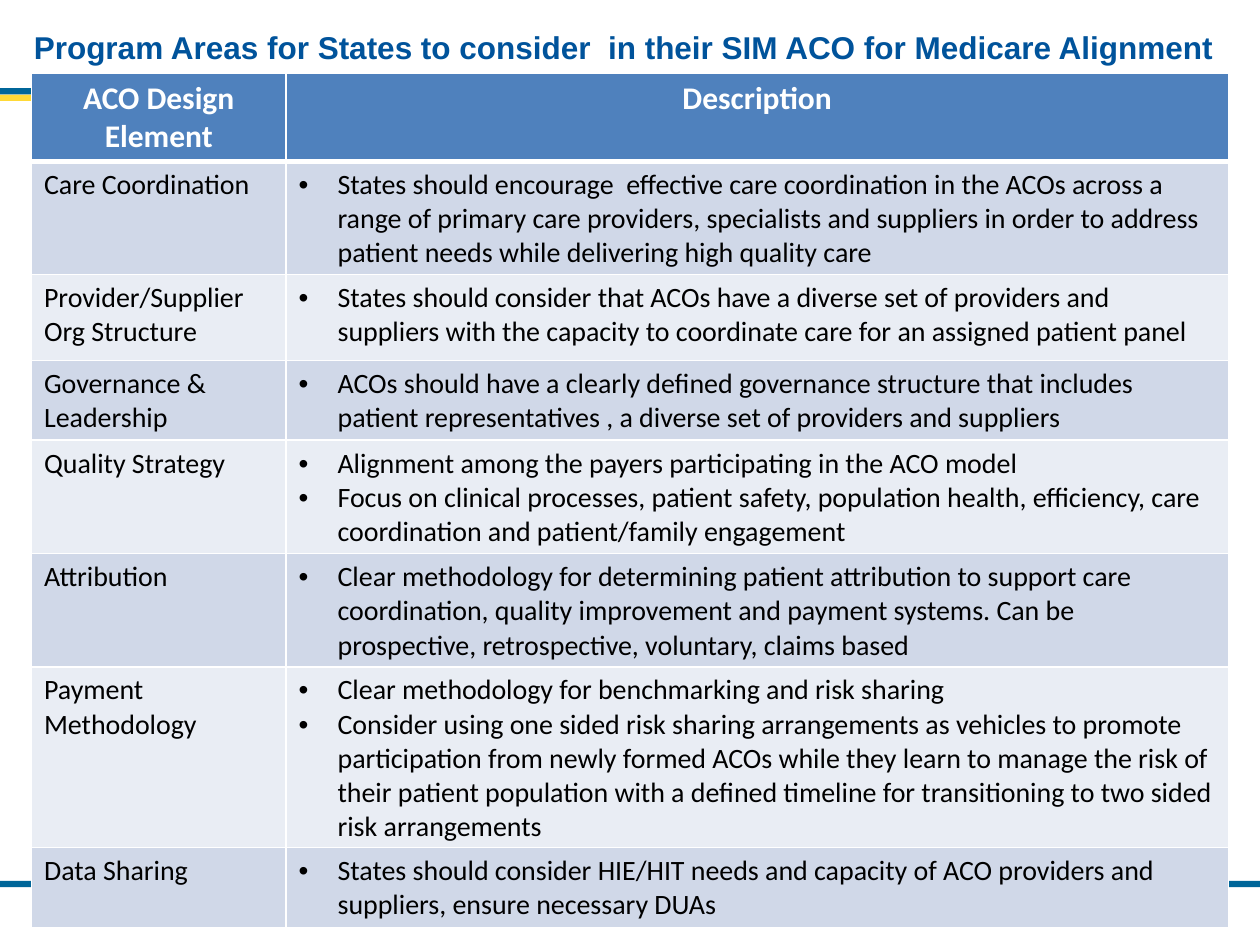
import pptx
import pptx.dml.color
import pptx.enum.shapes
import pptx.enum.text
import pptx.oxml
import pptx.oxml.ns
import pptx.util
from dataclasses import dataclass
from typing import Any

WIDTH, HEIGHT = 10, 7.5  # slide size in inches


@dataclass(frozen=True)
class Theme:
    title: str = "00539B"
    blue: str = "006699"
    yellow: str = "FFD937"
    header: str = "4F81BD"
    odd_row: str = "D0D8E8"
    even_row: str = "E9EDF4"
    white: str = "FFFFFF"
    black: str = "000000"
    title_font: str = "Arial"
    table_font: str = "Calibri"
    large: int = 18
    body: int = 16
    indent: float = 0.31


@dataclass(frozen=True)
class Band:
    """A rule from the left edge; lengths are shares of the slide."""
    top: float
    width: float
    color: str


@dataclass(frozen=True)
class Element:
    name: str
    points: tuple[str, ...]
    height: float  # inches


THEME = Theme()
BAND_HEIGHT = 0.05 / HEIGHT
BANDS = (
    Band(0.1, 0.66, THEME.yellow),
    Band(0.1 - BAND_HEIGHT, 0.527, THEME.blue),
    Band(0.932, 1, THEME.blue),
)
COLUMNS = (2.02, 7.48)
HEADINGS = ("ACO Design Element", "Description")
HEADER_HEIGHT = 0.69
ELEMENTS = (
    Element("Care Coordination", (
        "States should encourage  effective care coordination in the ACOs across a range of primary "
        "care providers, specialists and suppliers in order to address patient needs while delivering "
        "high quality care",), 0.89),
    Element("Provider/Supplier Org Structure", (
        "States should consider that ACOs have a diverse set of providers and suppliers with the "
        "capacity to coordinate care for an assigned patient panel",), 0.68),
    Element("Governance & Leadership", (
        "ACOs should have a clearly defined governance structure that includes patient "
        "representatives , a diverse set of providers and suppliers",), 0.63),
    Element("Quality Strategy", (
        "Alignment among the payers participating in the ACO model",
        "Focus on clinical processes, patient safety, population health, efficiency, care "
        "coordination and patient/family engagement"), 0.89),
    Element("Attribution", (
        "Clear methodology for determining patient attribution to support care coordination, quality "
        "improvement and payment systems. Can be prospective, retrospective, voluntary, claims "
        "based",), 0.89),
    Element("Payment Methodology", (
        "Clear methodology for benchmarking and risk sharing",
        "Consider using one sided risk sharing arrangements as vehicles to promote participation "
        "from newly formed ACOs while they learn to manage the risk of their patient population with "
        "a defined timeline for transitioning to two sided risk arrangements"), 1.42),
    Element("Data Sharing", (
        "States should consider HIE/HIT needs and capacity of ACO providers and suppliers, ensure "
        "necessary DUAs",), 0.63),
)


def across(share: float) -> int:
    return pptx.util.Inches(share * WIDTH)


def down(share: float) -> int:
    return pptx.util.Inches(share * HEIGHT)


def rgb(color: str) -> pptx.dml.color.RGBColor:
    return pptx.dml.color.RGBColor.from_string(color)


def add_span(para: Any, text: str, size: int, color: str, font: str, bold: bool) -> None:
    span = para.add_run()
    span.text = text
    span.font.size = pptx.util.Pt(size)
    span.font.name = font
    span.font.bold = bold
    span.font.color.rgb = rgb(color)


def add_bullet(para: Any) -> None:
    indent = pptx.util.Inches(THEME.indent)
    properties = para._p.get_or_add_pPr()
    properties.set("marL", str(indent))
    properties.set("indent", str(-indent))
    namespace = pptx.oxml.ns.nsdecls("a")
    properties.append(pptx.oxml.parse_xml(f'<a:buFont {namespace} typeface="Arial"/>'))
    properties.append(pptx.oxml.parse_xml(f'<a:buChar {namespace} char="•"/>'))


def add_borders(cell: Any, bottom: int) -> None:
    """White lines on all sides; they come before the fill in the cell."""
    properties = cell._tc.get_or_add_tcPr()
    for index, (side, points) in enumerate((("L", 1), ("R", 1), ("T", 1), ("B", bottom))):
        line = pptx.oxml.parse_xml(
            f'<a:ln{side} {pptx.oxml.ns.nsdecls("a")} w="{pptx.util.Pt(points)}"><a:solidFill>'
            f'<a:srgbClr val="{THEME.white}"/></a:solidFill></a:ln{side}>')
        properties.insert(index, line)


def fill_cell(cell: Any, texts: tuple[str, ...], fill: str,
              header: bool = False, bullets: bool = False) -> None:
    cell.fill.solid()
    cell.fill.fore_color.rgb = rgb(fill)
    add_borders(cell, 3 if header else 1)
    for index, text in enumerate(texts):
        para = cell.text_frame.add_paragraph() if index else cell.text_frame.paragraphs[0]
        if bullets:
            add_bullet(para)
        if header:
            para.alignment = pptx.enum.text.PP_ALIGN.CENTER
        add_span(para, text, THEME.large if header else THEME.body,
                 THEME.white if header else THEME.black, THEME.table_font, header)


def add_band(slide: Any, band: Band) -> None:
    shape = slide.shapes.add_shape(pptx.enum.shapes.MSO_SHAPE.RECTANGLE, 0, down(band.top),
                                   across(band.width), down(BAND_HEIGHT))
    shape.shadow.inherit = False
    shape.fill.solid()
    shape.fill.fore_color.rgb = rgb(band.color)
    shape.line.fill.background()


def add_title(slide: Any, text: str) -> None:
    box = slide.shapes.add_textbox(across(0.017), down(-1 / 30), across(0.975), down(1 / 6))
    box.text_frame.word_wrap = True
    box.text_frame.vertical_anchor = pptx.enum.text.MSO_ANCHOR.MIDDLE
    add_span(box.text_frame.paragraphs[0], text, THEME.large, THEME.title, THEME.title_font, True)


def add_design_table(slide: Any) -> None:
    heights = (HEADER_HEIGHT, *(element.height for element in ELEMENTS))
    table = slide.shapes.add_table(
        len(heights), len(COLUMNS), across(0.025), pptx.util.Inches(0.58),
        across(0.95), pptx.util.Inches(sum(heights))).table
    for column, width in zip(table.columns, COLUMNS):
        column.width = pptx.util.Inches(width)
    for row, height in zip(table.rows, heights):
        row.height = pptx.util.Inches(height)
    for column, heading in enumerate(HEADINGS):
        fill_cell(table.cell(0, column), (heading,), THEME.header, header=True)
    for row, element in enumerate(ELEMENTS, start=1):
        fill = THEME.odd_row if row % 2 else THEME.even_row
        fill_cell(table.cell(row, 0), (element.name,), fill)
        fill_cell(table.cell(row, 1), element.points, fill, bullets=True)


def main() -> None:
    deck = pptx.Presentation()
    deck.slide_width, deck.slide_height = across(1), down(1)
    slide = deck.slides.add_slide(deck.slide_layouts[6])

    # Coloured rules behind the content
    for band in BANDS:
        add_band(slide, band)

    # Heading and table
    add_title(slide, "Program Areas for States to consider  in their SIM ACO for Medicare Alignment")
    add_design_table(slide)
    deck.save("out.pptx")


if __name__ == "__main__":
    main()
